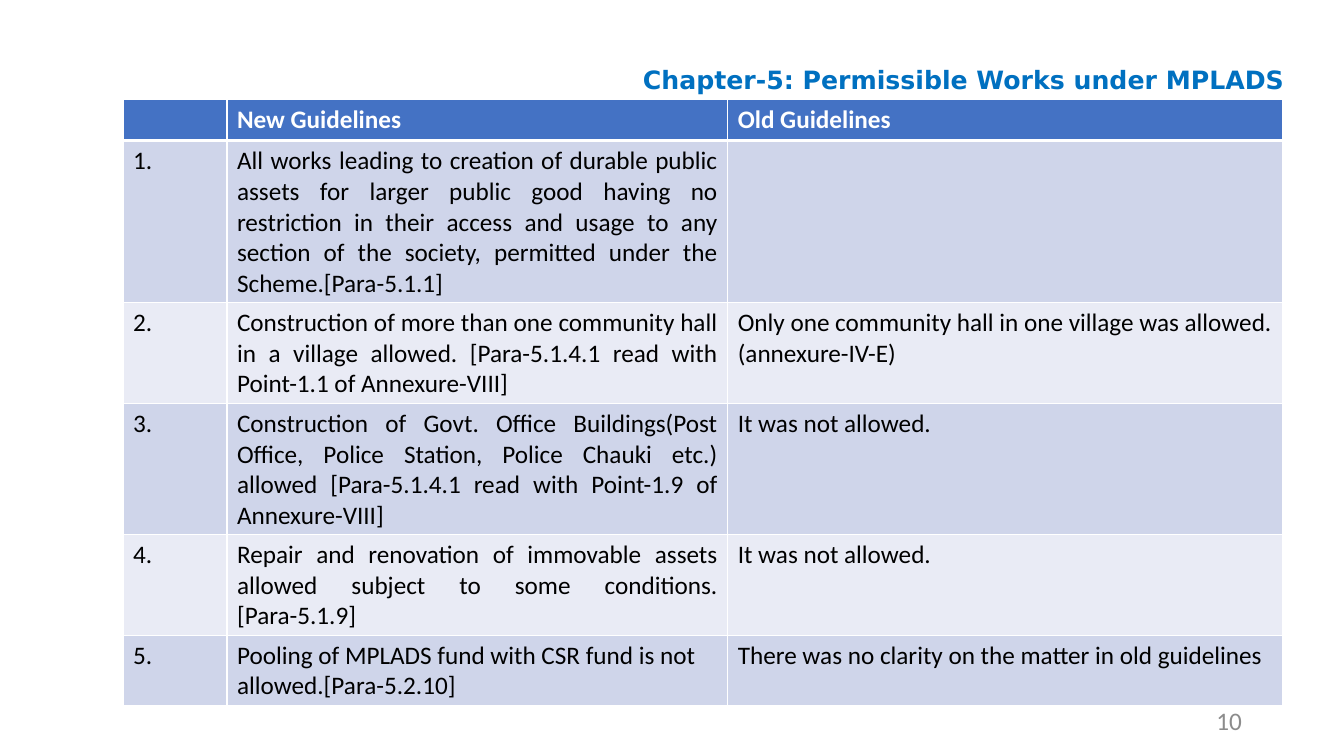
from dataclasses import dataclass

from lxml.etree import SubElement
from pptx import Presentation
from pptx.dml.color import RGBColor
from pptx.enum.text import MSO_ANCHOR as Anchor, MSO_AUTO_SIZE as AutoSize, PP_ALIGN as Align
from pptx.oxml.ns import qn
from pptx.util import Cm, Pt

COLOURS = {
    "title": "0070C0",
    "number": "8C8C8C",
    "header": "4472C4",
    "odd": "CFD5EA",
    "even": "E9EBF5",
    "white": "FFFFFF",
    "black": "000000",
}
BODY_FONT = "Calibri"
TITLE_FONT = "DejaVu Sans"
COLUMN_WIDTHS = (2.62, 12.62, 13.97)
HEADER_HEIGHT = 1.03


@dataclass
class Guideline:
    new: str
    old: str
    height: float
    new_align: Align = Align.JUSTIFY


GUIDELINES = [
    Guideline("All works leading to creation of durable public assets for larger public good "
              "having no restriction in their access and usage to any section of the society, "
              "permitted under the Scheme.[Para-5.1.1]", "", 4.08),
    Guideline("Construction of more than one community hall in a village allowed. "
              "[Para-5.1.4.1 read with Point-1.1 of Annexure-VIII]",
              "Only one community hall in one village was allowed.(annexure-IV-E)", 2.54),
    Guideline("Construction of Govt. Office Buildings(Post Office, Police Station, Police Chauki "
              "etc.) allowed [Para-5.1.4.1 read with Point-1.9 of Annexure-VIII]",
              "It was not allowed.", 3.3),
    Guideline("Repair and renovation of immovable assets allowed subject to some conditions. "
              "[Para-5.1.9]", "It was not allowed.", 2.54),
    Guideline("Pooling of MPLADS fund with CSR fund is not allowed.[Para-5.2.10]",
              "There was no clarity on the matter in old guidelines", 1.78, Align.LEFT),
]


def write(frame, text: str, colour: str, align: Align = Align.LEFT,
          font: str = BODY_FONT, bold: bool = False) -> None:
    para = frame.paragraphs[0]
    para.alignment = align
    span = para.add_run()
    span.text = text
    span.font.name = font
    span.font.size = Pt(18)
    span.font.bold = bold
    span.font.color.rgb = RGBColor.from_string(COLOURS[colour])


def style_cell(cell, fill: str, bottom_width: float) -> None:
    """Draw the white borders, then the fill, in schema order."""
    properties = cell._tc.get_or_add_tcPr()
    for side, width in (("lnL", 1), ("lnR", 1), ("lnT", 1), ("lnB", bottom_width)):
        border = SubElement(properties, qn(f"a:{side}"), w=str(Pt(width)))
        solid = SubElement(border, qn("a:solidFill"))
        SubElement(solid, qn("a:srgbClr"), val=COLOURS["white"])
    cell.fill.solid()
    cell.fill.fore_color.rgb = RGBColor.from_string(COLOURS[fill])


def add_title(page) -> None:
    title = page.shapes.title
    title.left, title.top, title.width, title.height = Cm(15.88), Cm(1.5), Cm(16.81), Cm(1.02)
    frame = title.text_frame
    frame.word_wrap = False
    frame.auto_size = AutoSize.SHAPE_TO_FIT_TEXT
    frame.vertical_anchor = Anchor.TOP
    write(frame, "Chapter-5: Permissible Works under MPLADS", "title",
          Align.CENTER, TITLE_FONT, True)
    frame.paragraphs[0].space_after = Pt(8)


def add_guidelines(page) -> None:
    height = HEADER_HEIGHT + sum(item.height for item in GUIDELINES)
    table = page.shapes.add_table(len(GUIDELINES) + 1, len(COLUMN_WIDTHS), Cm(3.1), Cm(2.51),
                                  Cm(sum(COLUMN_WIDTHS)), Cm(height)).table
    for column, width in zip(table.columns, COLUMN_WIDTHS):
        column.width = Cm(width)

    # Header row
    table.rows[0].height = Cm(HEADER_HEIGHT)
    for cell, text in zip(table.rows[0].cells, ("", "New Guidelines", "Old Guidelines")):
        style_cell(cell, "header", 3)
        if text:
            write(cell.text_frame, text, "white", bold=True)

    # Numbered rows in alternating bands
    for number, item in enumerate(GUIDELINES, 1):
        row = table.rows[number]
        row.height = Cm(item.height)
        texts = (f"{number}.", item.new, item.old)
        aligns = (Align.LEFT, item.new_align, Align.LEFT)
        for cell, text, align in zip(row.cells, texts, aligns):
            style_cell(cell, "odd" if number % 2 else "even", 1)
            if text:
                write(cell.text_frame, text, "black", align)


def add_page_number(page) -> None:
    box = page.shapes.add_textbox(Cm(23.93), Cm(17.65), Cm(7.62), Cm(1.02))
    box.text_frame.word_wrap = True
    box.text_frame.vertical_anchor = Anchor.MIDDLE
    write(box.text_frame, "10", "number", Align.RIGHT)


def main() -> None:
    deck = Presentation()
    deck.slide_width, deck.slide_height = Cm(33.87), Cm(19.05)
    page = deck.slides.add_slide(deck.slide_layouts.get_by_name("Title Only"))
    add_page_number(page)
    add_title(page)
    add_guidelines(page)
    deck.save("out.pptx")


if __name__ == "__main__":
    main()
